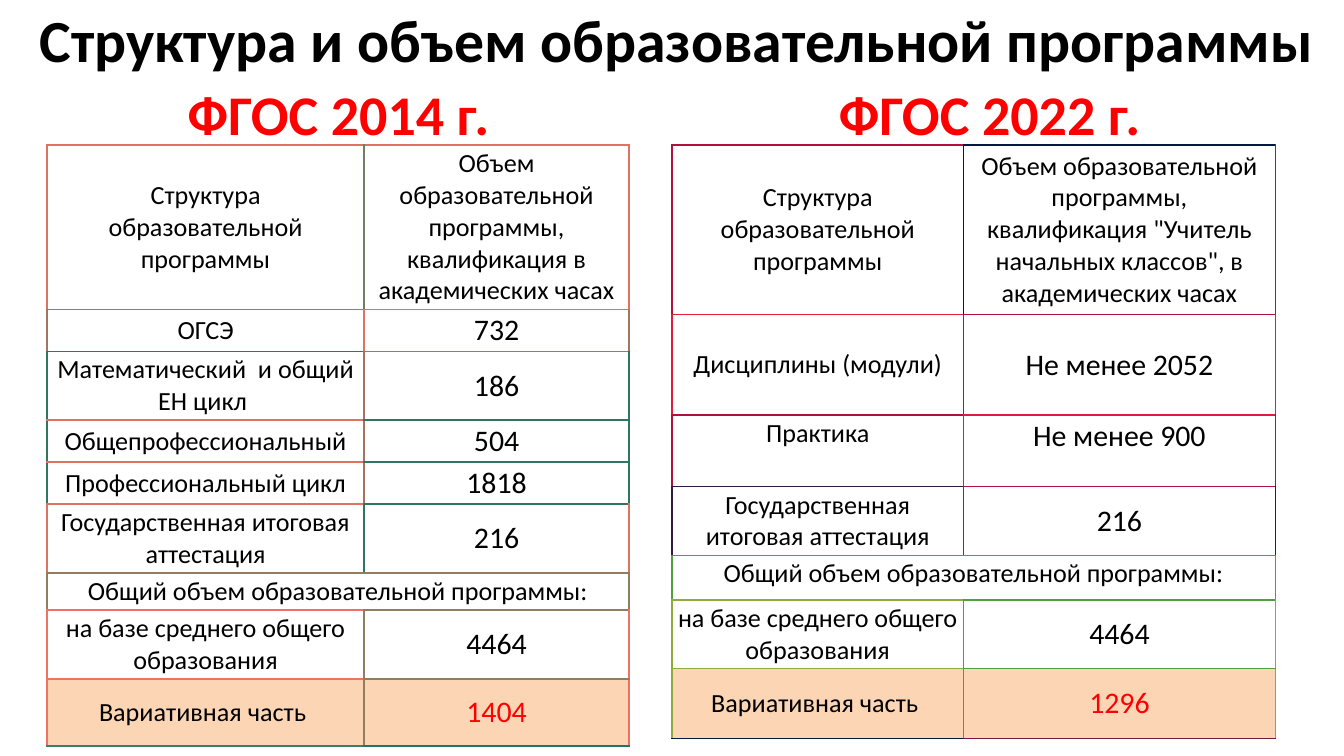
"""Build a slide comparing programme structure under two education standards."""
from dataclasses import dataclass

from lxml import etree
from pptx import Presentation
from pptx.dml.color import RGBColor
from pptx.enum.text import MSO_ANCHOR, PP_ALIGN
from pptx.oxml.ns import qn
from pptx.util import Inches, Pt

CENTER = PP_ALIGN.CENTER
MIDDLE, TOP = MSO_ANCHOR.MIDDLE, MSO_ANCHOR.TOP
FONT = "Calibri"
COLORS = {
    "black": "000000", "white": "FFFFFF", "red": "FF0000", "peach": "FCD5B5",
    "coral": "E07261", "salmon": "F07261", "tan": "A07561", "sage": "707E61",
    "olive": "907E61", "teal": "307561", "pine": "207661", "fern": "407E61",
    "wine": "B0103E", "crimson": "E01B3E", "navy": "00193E", "violet": "30193E",
    "ink": "001B3E", "plum": "701B3E", "green": "50A13C", "lime": "90AB3C",
}


@dataclass
class Cell:
    """A table cell; borders name the left, right, top and bottom colours."""
    text: str
    borders: str
    size: int = 14
    color: str = "black"
    fill: str = "white"
    anchor: MSO_ANCHOR = MIDDLE


@dataclass
class Grid:
    left: float
    widths: list[float]
    heights: list[float]
    rows: list[list[Cell]]


@dataclass
class Heading:
    text: str
    box: tuple[float, float, float, float]
    size: int
    color: str


STRUCTURE = "Структура образовательной программы"
TOTAL = "Общий объем образовательной программы:"
ATTESTATION = "Государственная итоговая аттестация"
BASE = "на базе среднего общего образования"
VARIABLE = "Вариативная часть "

HEADINGS = [
    Heading("Структура и объем образовательной программы", (-0.04, -0.18, 10.16, 0.94), 32, "black"),
    Heading("ФГОС 2014 г.", (0.75, 0.37, 3.54, 0.94), 30, "red"),
    Heading("ФГОС 2022 г.", (5.71, 0.37, 3.31, 0.94), 30, "red"),
]
GRIDS = [
    Grid(0.35, [2.36, 1.97], [1.2, 0.31, 0.51, 0.31, 0.31, 0.51, 0.27, 0.51, 0.5], [
        [Cell(STRUCTURE, "coral sage coral tan"),
         Cell("Объем образовательной программы, квалификация в академических часах",
              "sage coral coral coral")],
        [Cell("ОГСЭ", "tan coral tan teal"), Cell("732", "coral tan coral tan", 16)],
        [Cell("Математический  и общий ЕН цикл ", "teal tan teal coral"),
         Cell("186", "tan teal tan teal", 16)],
        [Cell("Общепрофессиональный", "teal tan coral coral"),
         Cell("504", "tan teal teal teal", 16)],
        [Cell("Профессиональный цикл", "teal tan coral coral"),
         Cell("1818", "tan teal teal teal", 16)],
        [Cell(ATTESTATION, "coral teal coral olive"),
         Cell("216", "teal coral teal olive", 16)],
        [Cell(TOTAL, "olive olive olive salmon")],
        [Cell(BASE, "salmon olive salmon salmon"),
         Cell("4464", "olive salmon olive olive", 16)],
        [Cell(VARIABLE, "salmon olive salmon fern", fill="peach"),
         Cell("1404", "olive salmon olive pine", 16, "red", "peach")],
    ]),
    Grid(5, [2.17, 2.32], [1.26, 0.75, 0.53, 0.51, 0.33, 0.51, 0.52], [
        [Cell(STRUCTURE, "wine navy wine crimson"),
         Cell('Объем образовательной программы, квалификация "Учитель начальных классов", '
              "в академических часах", "navy wine navy wine")],
        [Cell("Дисциплины (модули)", "crimson wine crimson wine"),
         Cell("Не менее 2052", "wine crimson wine crimson", 16)],
        [Cell("Практика", "wine crimson wine violet", anchor=TOP),
         Cell("Не менее 900", "crimson wine crimson wine", 16, anchor=TOP)],
        [Cell(ATTESTATION, "violet wine violet green"),
         Cell("216", "wine violet wine green", 16)],
        [Cell(TOTAL, "green green green lime", anchor=TOP)],
        [Cell(BASE, "lime green lime lime"), Cell("4464", "green lime green green", 16)],
        [Cell(VARIABLE, "lime green lime ink", fill="peach"),
         Cell("1296", "green lime green plum", 16, "red", "peach")],
    ]),
]


def rgb(name: str) -> RGBColor:
    return RGBColor.from_string(COLORS[name])


def write(tf, text: str, *, size: int, color: str, bold: bool = False) -> None:
    tf.word_wrap = True
    p = tf.paragraphs[0]
    p.alignment = CENTER
    r = p.add_run()
    r.text = text
    r.font.name, r.font.size, r.font.bold = FONT, Pt(size), bold
    r.font.color.rgb = rgb(color)


def add_heading(s, heading: Heading) -> None:
    tf = s.shapes.add_textbox(*map(Inches, heading.box)).text_frame
    tf.vertical_anchor = MIDDLE
    write(tf, heading.text, size=heading.size, color=heading.color, bold=True)


def set_borders(cell, names: str) -> None:
    props = cell._tc.get_or_add_tcPr()
    for side, name in zip("LRTB", names.split()):
        ln = etree.SubElement(props, qn(f"a:ln{side}"), w=str(Pt(1)))
        fill = etree.SubElement(ln, qn("a:solidFill"))
        etree.SubElement(fill, qn("a:srgbClr"), val=COLORS[name])


def fill_cell(cell, item: Cell) -> None:
    cell.margin_left = cell.margin_right = Inches(0.04)
    cell.margin_top = cell.margin_bottom = Inches(0.02)
    cell.vertical_anchor = item.anchor
    set_borders(cell, item.borders)
    cell.fill.solid()
    cell.fill.fore_color.rgb = rgb(item.fill)
    write(cell.text_frame, item.text, size=item.size, color=item.color)


def add_grid(s, grid: Grid) -> None:
    table = s.shapes.add_table(
        len(grid.rows), len(grid.widths), Inches(grid.left), Inches(1.08),
        Inches(sum(grid.widths)), Inches(sum(grid.heights))).table
    table.first_row = table.horz_banding = False
    for column, width in zip(table.columns, grid.widths):
        column.width = Inches(width)
    for i, (height, row) in enumerate(zip(grid.heights, grid.rows)):
        table.rows[i].height = Inches(height)
        if len(row) == 1:
            table.cell(i, 0).merge(table.cell(i, 1))
        for j, item in enumerate(row):
            fill_cell(table.cell(i, j), item)


def main() -> None:
    prs = Presentation()
    prs.slide_width = Inches(10)
    prs.slide_height = prs.slide_width * 9 // 16
    s = prs.slides.add_slide(prs.slide_layouts[6])
    for grid in GRIDS:
        add_grid(s, grid)
    for heading in HEADINGS:
        add_heading(s, heading)
    prs.save("out.pptx")


if __name__ == "__main__":
    main()
